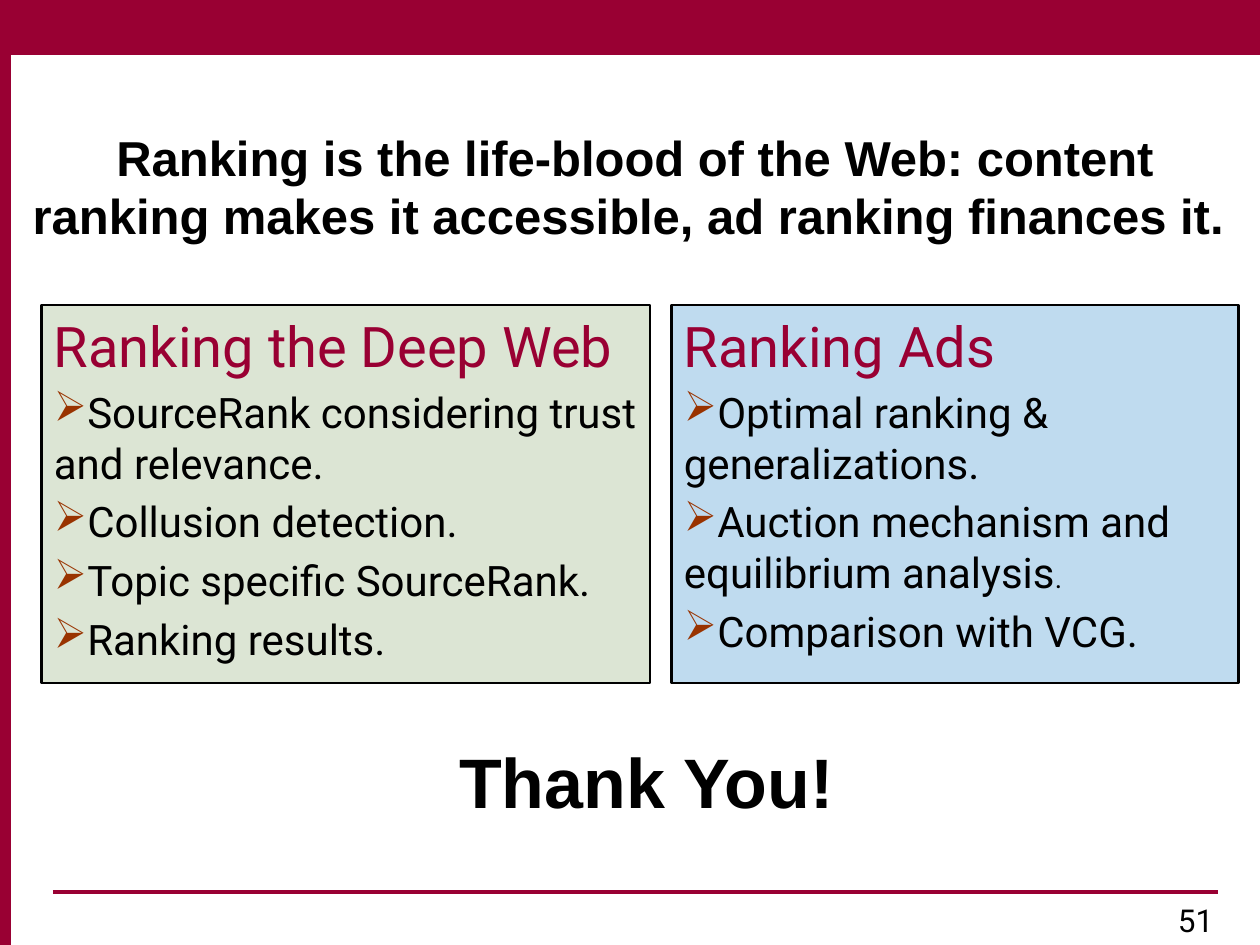
from lxml import etree
from pptx import Presentation
from pptx.dml.color import RGBColor
from pptx.enum.shapes import MSO_CONNECTOR, MSO_SHAPE
from pptx.enum.text import MSO_ANCHOR, PP_ALIGN
from pptx.oxml.ns import qn
from pptx.util import Inches, Pt

RECT = MSO_SHAPE.RECTANGLE
STRAIGHT = MSO_CONNECTOR.STRAIGHT
TOP = MSO_ANCHOR.TOP
LEFT, CENTER = PP_ALIGN.LEFT, PP_ALIGN.CENTER

MAROON, BLACK, RUST = "990033", "000000", "993300"
HEADING = {"size": Pt(32), "name": "Roboto", "color": MAROON}
BODY = {"size": Pt(24), "name": "Roboto", "color": BLACK}
SMALL = {**BODY, "size": Pt(16)}
NUMBER = {**BODY, "size": Pt(18)}
CLAIM = {"size": Pt(28), "name": "Arial", "bold": True, "color": BLACK}
THANKS = {**CLAIM, "size": Pt(40)}


def rgb(color):
    return RGBColor.from_string(color)


def sub(parent, tag, **attrs):
    return etree.SubElement(parent, qn(tag), attrs)


def add_run(p, text, fmt):
    r = p.add_run()
    r.text = text
    for key, value in fmt.items():
        if key == "color":
            r.font.color.rgb = rgb(value)
        else:
            setattr(r.font, key, value)


def add_rect(s, box, fill, line, width, opacity=None):
    """Add a rectangle; opacity is a percentage."""
    sp = s.shapes.add_shape(RECT, *map(Inches, box))
    sp.shadow.inherit = False
    sp.fill.solid()
    sp.fill.fore_color.rgb = rgb(fill)
    if opacity is not None:
        color = sp.fill._xPr.find(qn("a:solidFill"))[0]
        sub(color, "a:alpha", val=str(opacity * 1000))
    sp.line.color.rgb = rgb(line)
    sp.line.width = Pt(width)
    return sp


def add_rule(s, left, right, y):
    line = s.shapes.add_connector(STRAIGHT, *map(Inches, (left, y, right, y)))
    line.line.color.rgb = rgb(MAROON)
    line.line.width = Pt(2.25)
    sub(line._element.spPr, "a:effectLst")


def add_text(s, box, text, fmt, align=LEFT):
    tf = s.shapes.add_textbox(*map(Inches, box)).text_frame
    tf.word_wrap = True
    p = tf.paragraphs[0]
    p.alignment = align
    add_run(p, text, fmt)


def format_item(p, bullet=True):
    """Set the hanging indent, proportional spacing and arrow bullet."""
    p.alignment = LEFT
    pPr = p._p.get_or_add_pPr()
    pPr.set("marL", "0")
    pPr.set("indent", str(Inches(-0.5)))
    sub(sub(pPr, "a:spcBef"), "a:spcPct", val="20000")
    if bullet:
        sub(sub(pPr, "a:buClr"), "a:srgbClr", val=RUST)
        sub(pPr, "a:buChar", char="➢")
    else:
        sub(pPr, "a:buNone")


def add_panel(s, left, width, fill, opacity, heading, items):
    """Add a tinted panel; each item is a list of (text, format) runs."""
    sp = add_rect(s, (left, 2.42, width, 3), fill, BLACK, 1.5, opacity)
    tf = sp.text_frame
    tf.word_wrap = True
    tf.vertical_anchor = TOP
    p = tf.paragraphs[0]
    format_item(p, bullet=False)
    add_run(p, heading, HEADING)
    for runs in items:
        p = tf.add_paragraph()
        format_item(p)
        for text, fmt in runs:
            add_run(p, text, fmt)


def main():
    prs = Presentation()
    prs.slide_width, prs.slide_height = Inches(10), Inches(7.5)
    s = prs.slides.add_slide(prs.slide_layouts[6])

    add_rule(s, 0.42, 9.67, 7.08)
    add_rect(s, (0, 0, 0.08, 7.5), MAROON, MAROON, 0.75)
    add_rule(s, 0, 10, 0.42)
    for left in (0.08, 2.17):
        add_rect(s, (left, 0, 7.83, 0.42), MAROON, MAROON, 0.75)

    add_panel(s, 0.33, 4.83, "336600", 17, "Ranking the Deep Web", [
        [("SourceRank considering trust and relevance.", BODY)],
        [("Collusion detection.", BODY)],
        [("Topic specific SourceRank.", BODY)],
        [("Ranking results.", BODY)],
    ])
    add_text(s, (9.25, 7.1, 0.58, 0.4), "51", NUMBER)
    add_panel(s, 5.33, 4.5, "0070C0", 25, "Ranking Ads", [
        [("Optimal ranking & generalizations.", BODY)],
        [("Auction mechanism and equilibrium analysis", BODY), (".", SMALL)],
        [("Comparison with VCG.", BODY)],
    ])
    add_text(s, (0.08, 0.96, 9.92, 1.04),
             "Ranking is the life-blood of the Web: content ranking makes it "
             "accessible, ad ranking finances it. ", CLAIM, CENTER)
    add_text(s, (0.42, 5.81, 9.42, 0.77), "Thank You!", THANKS, CENTER)

    prs.save("out.pptx")


if __name__ == "__main__":
    main()
